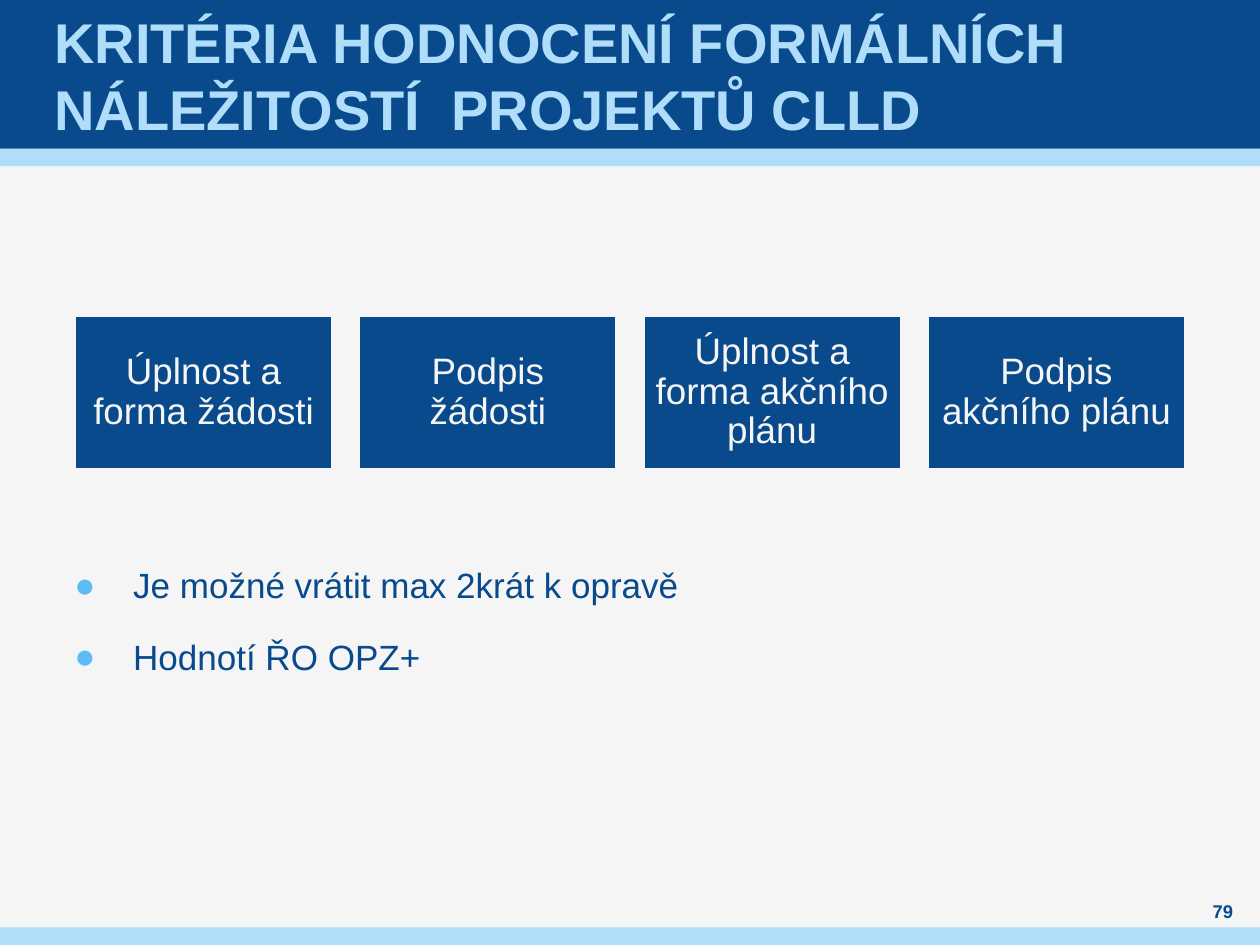
from lxml import etree
from pptx import Presentation
from pptx.dml.color import RGBColor
from pptx.enum.shapes import MSO_SHAPE
from pptx.enum.text import MSO_ANCHOR, PP_ALIGN
from pptx.oxml.ns import qn
from pptx.util import Pt

RECTANGLE = MSO_SHAPE.RECTANGLE
TOP, MIDDLE = MSO_ANCHOR.TOP, MSO_ANCHOR.MIDDLE
LEFT, CENTER = PP_ALIGN.LEFT, PP_ALIGN.CENTER
FONT = "Arial"
COLORS = {"navy": "084A8B", "sky": "AFDDFA", "bullet": "5FBBF5", "paper": "F5F5F5"}
WIDTH, HEIGHT = 720, 540
CRITERIA = [
    "Úplnost a forma žádosti",
    "Podpis žádosti",
    "Úplnost a forma akčního plánu",
    "Podpis akčního plánu",
]
NOTES = ["Je možné vrátit max 2krát k opravě", "Hodnotí ŘO OPZ+"]


def rgb(name):
    """Return the named palette colour."""
    return RGBColor.from_string(COLORS[name])


def add_rectangle(slide, box, fill, line=None):
    """Add a flat rectangle, outlined when a line colour is given."""
    shape = slide.shapes.add_shape(RECTANGLE, *map(Pt, box))
    shape.shadow.inherit = False
    shape.fill.solid()
    shape.fill.fore_color.rgb = rgb(fill)
    if line:
        shape.line.color.rgb = rgb(line)
        shape.line.width = Pt(2)
    else:
        shape.line.fill.background()
    return shape


def add_text_box(slide, box):
    """Add an empty text box."""
    return slide.shapes.add_textbox(*map(Pt, box))


def write_text(shape, lines, size, color, bold=False, align=LEFT, anchor=MIDDLE,
               insets=(0, 0), spacing=None, before=0, after=0):
    """Write one paragraph per line into a shape and return the paragraphs."""
    frame = shape.text_frame
    frame.word_wrap = True
    frame.vertical_anchor = anchor
    frame.margin_left = frame.margin_right = Pt(insets[0])
    frame.margin_top = frame.margin_bottom = Pt(insets[1])
    frame.text = "\n".join(lines)
    for paragraph in frame.paragraphs:
        paragraph.alignment = align
        paragraph.line_spacing = spacing
        paragraph.space_before, paragraph.space_after = Pt(before), Pt(after)
        font = paragraph.runs[0].font
        font.name, font.size, font.bold = FONT, Pt(size), bold
        font.color.rgb = rgb(color)
    return frame.paragraphs


def add_bullet(paragraph, indent):
    """Give a paragraph a coloured bullet with a hanging indent."""
    properties = paragraph._p.get_or_add_pPr()
    properties.set("marL", str(Pt(indent)))
    properties.set("indent", str(-Pt(indent)))
    color = etree.SubElement(properties, qn("a:buClr"))
    etree.SubElement(color, qn("a:srgbClr"), val=COLORS["bullet"])
    etree.SubElement(properties, qn("a:buFont"), typeface=FONT)
    etree.SubElement(properties, qn("a:buChar"), char="●")


def add_header(slide, left, top, width, height, title):
    """Draw the title band with its light strip below."""
    strip = 10
    band = height - strip
    add_rectangle(slide, (left, top + band, width, strip), "sky")
    add_rectangle(slide, (left, top, width, band), "navy")
    title_box = add_text_box(slide, (left + 28, top, width - 57, band))
    write_text(title_box, [title], 32, "sky", bold=True, insets=(3, 0))


def add_criteria(slide, left, top, width, height, labels):
    """Draw a row of equal cards with equal gaps."""
    gap = 14.8
    card_width = (width - gap * (len(labels) - 1)) / len(labels)
    for index, label in enumerate(labels):
        box = (left + index * (card_width + gap), top, card_width, height)
        card = add_rectangle(slide, box, "navy", line="paper")
        write_text(card, [label], 21, "paper", align=CENTER, insets=(6, 6), spacing=0.9)


def add_notes_list(slide, left, top, width, height, lines):
    """Write the bulleted list."""
    text_box = add_text_box(slide, (left, top, width, height))
    paragraphs = write_text(text_box, lines, 20, "navy", anchor=TOP,
                            spacing=Pt(28.8), before=6, after=6)
    for paragraph in paragraphs:
        add_bullet(paragraph, 33.6)


def add_footer(slide, left, top, width, height, number):
    """Draw the bottom strip and the page number above it."""
    strip = 10
    add_rectangle(slide, (left, top + height - strip, width, strip), "sky")
    number_box = add_text_box(slide, (left + width - 39.6, top, 36.7, 14.4))
    write_text(number_box, [number], 10.5, "navy", bold=True, align=CENTER)


def main():
    """Build and save the slide."""
    presentation = Presentation()
    presentation.slide_width, presentation.slide_height = Pt(WIDTH), Pt(HEIGHT)
    slide = presentation.slides.add_slide(presentation.slide_layouts[6])
    slide.background.fill.solid()
    slide.background.fill.fore_color.rgb = rgb("paper")
    add_header(slide, 0, 0, WIDTH, 95,
               "KRITÉRIA HODNOCENÍ FORMÁLNÍCH NÁLEŽITOSTÍ  PROJEKTŮ CLLD")
    add_notes_list(slide, 42.5, 317.5, 635, 164, NOTES)
    add_footer(slide, 0, 513.4, WIDTH, HEIGHT - 513.4, "79")
    add_criteria(slide, 42.5, 180, 635, 88.5, CRITERIA)
    presentation.save("out.pptx")


if __name__ == "__main__":
    main()
